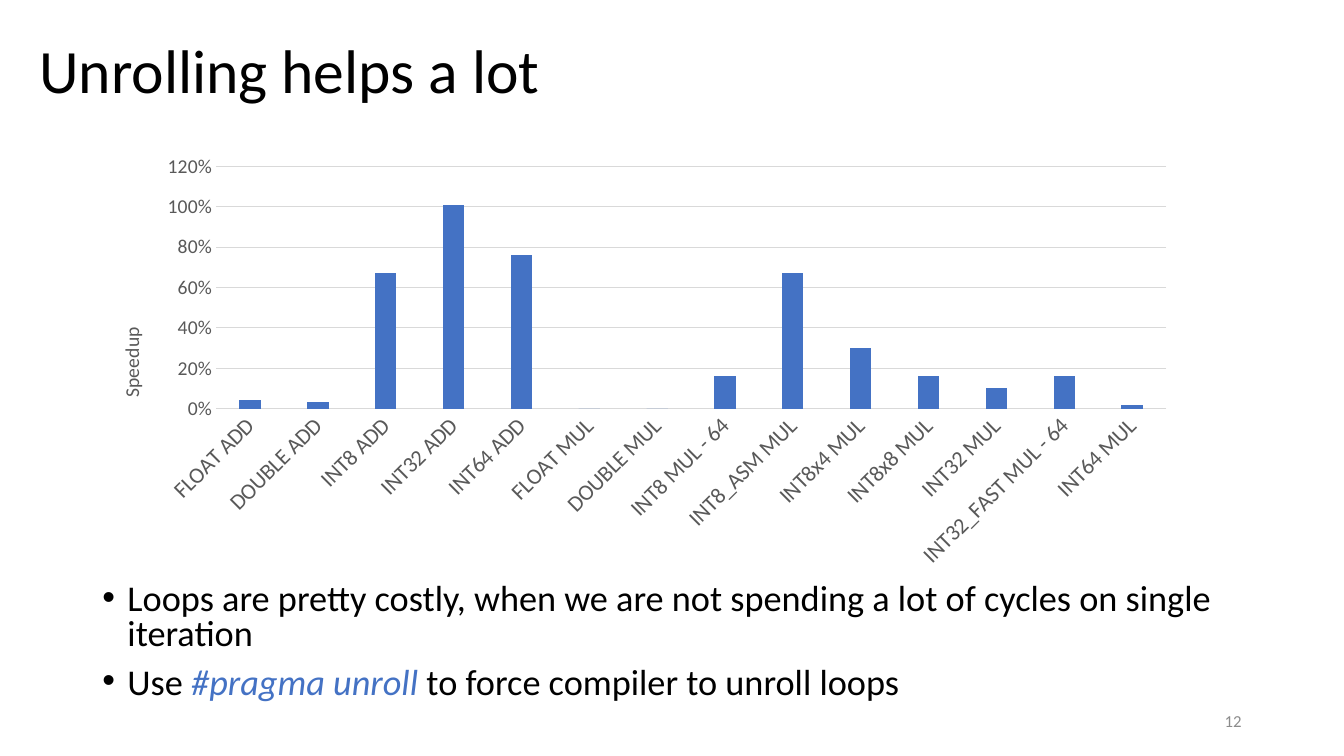
from lxml.etree import SubElement
from pptx import Presentation
from pptx.chart.data import CategoryChartData
from pptx.dml.color import RGBColor
from pptx.enum.chart import XL_CHART_TYPE as ChartType, XL_TICK_MARK as TickMark
from pptx.enum.text import MSO_ANCHOR as Anchor, PP_ALIGN as Align
from pptx.oxml.ns import qn
from pptx.util import Pt

BLACK = RGBColor(0x00, 0x00, 0x00)
BLUE = RGBColor(0x44, 0x72, 0xC4)
LABEL_GRAY = RGBColor(0x59, 0x59, 0x59)
GRID_GRAY = RGBColor(0xD9, 0xD9, 0xD9)
NUMBER_GRAY = RGBColor(0x8C, 0x8C, 0x8C)

SPEEDUPS = {
    "FLOAT ADD": 0.04,
    "DOUBLE ADD": 0.03,
    "INT8 ADD": 0.67,
    "INT32 ADD": 1.01,
    "INT64 ADD": 0.76,
    "FLOAT MUL": 0,
    "DOUBLE MUL": 0,
    "INT8 MUL - 64": 0.16,
    "INT8_ASM MUL": 0.67,
    "INT8x4 MUL": 0.3,
    "INT8x8 MUL": 0.16,
    "INT32 MUL": 0.1,
    "INT32_FAST MUL - 64": 0.16,
    "INT64 MUL": 0.02,
}
TAKEAWAYS = [
    [("Loops are pretty costly, when we are not spending a lot of cycles on single iteration", False)],
    [("Use ", False), ("#pragma unroll ", True), ("to force compiler to unroll loops", False)],
]


class SlideWriter:
    font_name = "Calibri"

    def __init__(self, slide):
        self.slide = slide

    def style(self, font, size, color):
        font.name = self.font_name
        font.size = Pt(size)
        font.color.rgb = color

    def frame(self, box, anchor):
        text_frame = self.slide.shapes.add_textbox(*map(Pt, box)).text_frame
        text_frame.word_wrap = True
        text_frame.vertical_anchor = anchor
        return text_frame

    def line(self, text, box, size, color, align=Align.LEFT, spacing=1.0):
        paragraph = self.frame(box, Anchor.MIDDLE).paragraphs[0]
        paragraph.text = text
        paragraph.alignment = align
        paragraph.line_spacing = spacing
        self.style(paragraph.font, size, color)

    def bullets(self, items, box, size):
        text_frame = self.frame(box, Anchor.TOP)
        for index, pieces in enumerate(items):
            paragraph = text_frame.add_paragraph() if index else text_frame.paragraphs[0]
            paragraph.line_spacing = 0.8
            paragraph.space_before = Pt(10)
            properties = paragraph._p.get_or_add_pPr()
            properties.set("marL", str(Pt(18)))
            properties.set("indent", str(-Pt(18)))
            SubElement(properties, qn("a:buFont"), typeface="Arial")
            SubElement(properties, qn("a:buChar"), char="•")
            self.style(paragraph.font, size, BLACK)
            for text, is_code in pieces:
                run = paragraph.add_run()
                run.text = text
                self.style(run.font, size, BLUE if is_code else BLACK)
                run.font.italic = is_code

    def place(self, parent, position, **layout):
        for old in parent.findall(qn("c:layout")):
            parent.remove(old)
        holder = parent.makeelement(qn("c:layout"))
        parent.insert(position, holder)
        manual = SubElement(holder, qn("c:manualLayout"))
        for tag, value in layout.items():
            SubElement(manual, qn(f"c:{tag}"), val=str(value))

    def axis(self, axis, size):
        axis.major_tick_mark = axis.minor_tick_mark = TickMark.NONE
        self.style(axis.tick_labels.font, size, LABEL_GRAY)

    def column_chart(self, values, box, value_title):
        data = CategoryChartData(number_format="0%")
        data.categories = list(values)
        data.add_series("Series 1", list(values.values()))
        chart = self.slide.shapes.add_chart(
            ChartType.COLUMN_CLUSTERED, *map(Pt, box), data).chart
        chart.has_legend = chart.has_title = False
        self.style(chart.font, 10, BLACK)

        plot = chart.plots[0]
        plot.vary_by_categories = False
        plot.gap_width, plot.overlap = 219, -27
        columns = plot.series[0].format.fill
        columns.solid()
        columns.fore_color.rgb = BLUE

        operations = chart.category_axis
        self.axis(operations, 16)
        operations.format.line.color.rgb = GRID_GRAY
        operations.format.line.width = Pt(0.75)
        operations._element.find(qn("c:txPr")).find(qn("a:bodyPr")).set("rot", "-2700000")

        speedup = chart.value_axis
        self.axis(speedup, 14)
        speedup.minimum_scale, speedup.maximum_scale, speedup.major_unit = 0, 1.2, 0.2
        speedup.tick_labels.number_format = "0%"
        speedup.tick_labels.number_format_is_linked = False
        speedup.format.line.fill.background()
        speedup.major_gridlines.format.line.color.rgb = GRID_GRAY
        speedup.major_gridlines.format.line.width = Pt(0.75)

        title = speedup.axis_title
        title.text_frame.text = value_title
        self.style(title.text_frame.paragraphs[0].font, 14, LABEL_GRAY)
        title.text_frame.paragraphs[0].font.bold = False
        title.text_frame._txBody.find(qn("a:bodyPr")).set("rot", "-5400000")
        self.place(title._element, 1, xMode="edge", yMode="edge", x=0.02, y=0.41)
        self.place(chart._chartSpace.chart.plotArea, 0, layoutTarget="inner",
                   xMode="edge", yMode="edge", x=0.113, y=0.047, w=0.867, h=0.56)


def main():
    deck = Presentation()
    deck.slide_width, deck.slide_height = Pt(960), Pt(540)
    writer = SlideWriter(deck.slides.add_slide(deck.slide_layouts[6]))
    writer.line("Unrolling helps a lot", (21, 0, 828, 104.4), 44, BLACK, spacing=0.9)
    writer.bullets(TAKEAWAYS, (66, 413.3, 828, 98), 25.9)
    writer.column_chart(SPEEDUPS, (66, 104.4, 782.6, 308.9), "Speedup")
    writer.line("12", (678, 500.5, 216, 28.8), 12, NUMBER_GRAY, Align.RIGHT)
    deck.save("out.pptx")


if __name__ == "__main__":
    main()
